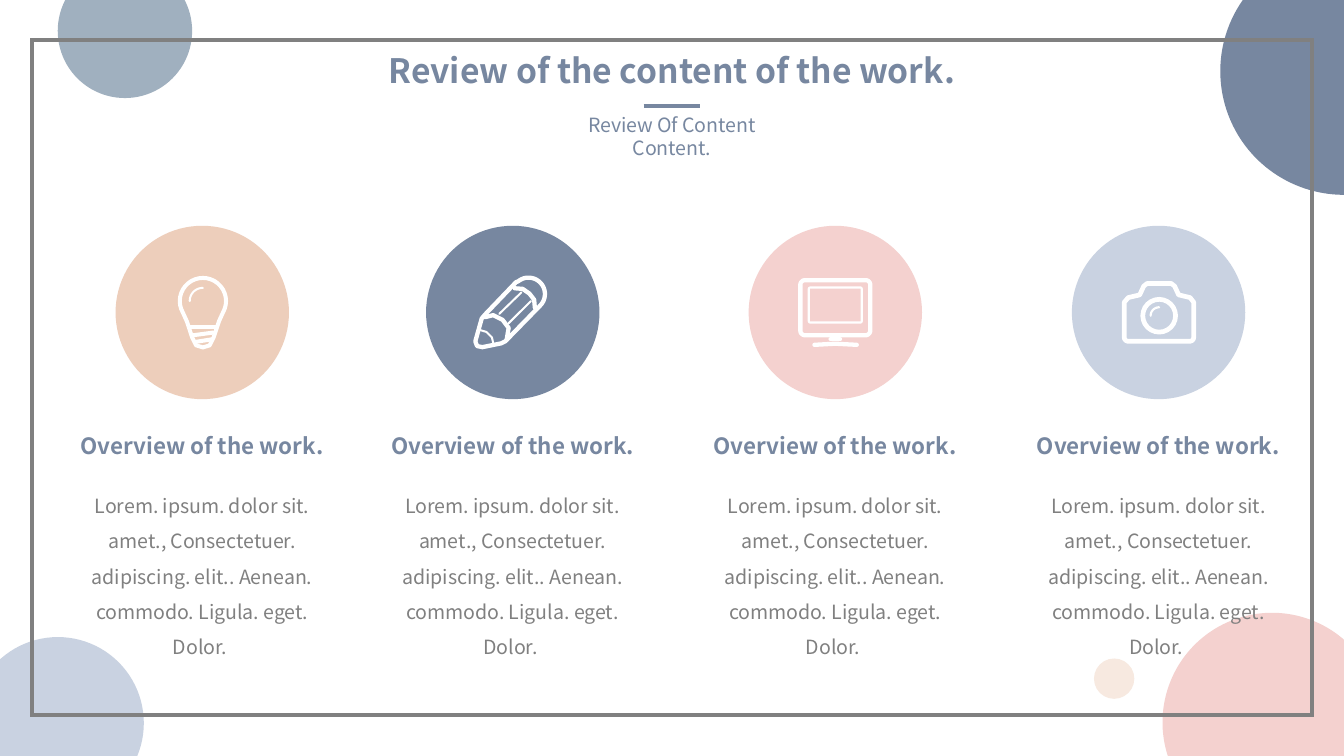
from math import cos, radians, sin

from lxml import etree
from pptx import Presentation
from pptx.dml.color import RGBColor
from pptx.enum.shapes import MSO_CONNECTOR, MSO_SHAPE
from pptx.enum.text import MSO_AUTO_SIZE, PP_ALIGN
from pptx.oxml.ns import qn
from pptx.util import Inches, Pt

OVAL, RECTANGLE = MSO_SHAPE.OVAL, MSO_SHAPE.RECTANGLE
STRAIGHT = MSO_CONNECTOR.STRAIGHT
CENTER = PP_ALIGN.CENTER
GROW = MSO_AUTO_SIZE.SHAPE_TO_FIT_TEXT

FONT = "Noto Sans CJK SC"
COLORS = {
    "navy": "7787A0", "rose": "F4D1CF", "steel": "A0B0BF", "mist": "C9D2E1",
    "cream": "F7E9E0", "peach": "EDCEBB", "gray": "808080", "white": "FFFFFF",
}
SLIDE_WIDTH = Inches(10)
SLIDE_HEIGHT = SLIDE_WIDTH * 9 // 16
CELL = SLIDE_WIDTH / 100
ICON_CELLS = 55
HEADING = "Overview of the work."
BODY = ("Lorem. ipsum. dolor sit. amet., Consectetuer. adipiscing. elit.. "
        "Aenean. commodo. Ligula. eget. Dolor. ")


def grid(cells):
    """Convert slide grid cells to a length."""
    return round(cells * CELL)


def rgb(color):
    """Look up a palette colour."""
    return RGBColor.from_string(COLORS[color])


def add_text(slide, box, text, size=10.5, color="navy", bold=False, wrap=True, spacing=None):
    """Place one centred paragraph in a box given in grid cells."""
    frame = slide.shapes.add_textbox(*map(grid, box)).text_frame
    frame.word_wrap = wrap
    frame.auto_size = GROW
    paragraph = frame.paragraphs[0]
    paragraph.alignment = CENTER
    if spacing:
        paragraph.line_spacing = spacing
    run = paragraph.add_run()
    run.text = text
    run.font.name, run.font.size, run.font.bold = FONT, Pt(size), bold
    run.font.color.rgb = rgb(color)


def style_outline(shape, color, width, join):
    """Leave a shape unfilled and give it a line with the named join."""
    shape.shadow.inherit = False
    shape.fill.background()
    shape.line.color.rgb = rgb(color)
    shape.line.width = width
    outline = shape._element.spPr.find(qn("a:ln"))
    if join == "round":
        outline.set("cap", "rnd")
    etree.SubElement(outline, qn(f"a:{join}"))


def add_disc(slide, box, color):
    """Place a plain coloured circle."""
    disc = slide.shapes.add_shape(OVAL, *map(grid, box))
    disc.shadow.inherit = False
    disc.fill.solid()
    disc.fill.fore_color.rgb = rgb(color)
    disc.line.fill.background()


def add_backdrop(slide):
    """Draw the decorative circles and the frame."""
    for left, top, size, color in (
        (90.8, -3.9, 18.4, "navy"), (86.5, 45.6, 16.3, "rose"),
        (4.3, -2.7, 10, "steel"), (-2.1, 47.4, 12.8, "mist"),
        (81.4, 49, 3, "cream"),
    ):
        add_disc(slide, (left, top, size, size), color)
    border = slide.shapes.add_shape(RECTANGLE, *map(grid, (2.4, 3, 95.2, 50.2)))
    style_outline(border, "gray", Pt(2.25), "miter")


def add_title(slide, box):
    """Place the title, its short rule and the subtitle inside a box."""
    left, top, width, height = box
    middle, rule_top = left + width / 2, top + 4.7
    add_text(slide, (left, top, width, 4), "Review of the content of the work.",
             size=18, bold=True)
    add_text(slide, (middle - 9.75, rule_top, 19.5, height - 4.7), "Review Of Content Content.")
    rule = slide.shapes.add_connector(
        STRAIGHT, *map(grid, (middle - 2.1, rule_top, middle + 2.1, rule_top)))
    rule.line.color.rgb = rgb("navy")
    rule.line.width = Pt(2.25)
    etree.SubElement(rule._element.spPr, qn("a:effectLst"))


def arc(x, y, radius, start, end):
    """Return points along an arc, with degrees running clockwise."""
    steps = 24
    angles = [radians(start + (end - start) * i / steps) for i in range(steps + 1)]
    return [(x + radius * cos(a), y + radius * sin(a)) for a in angles]


def rounded(left, top, right, bottom, radius):
    """Return the points of a rectangle with rounded corners."""
    return (arc(left + radius, top + radius, radius, 180, 270)
            + arc(right - radius, top + radius, radius, 270, 360)
            + arc(right - radius, bottom - radius, radius, 0, 90)
            + arc(left + radius, bottom - radius, radius, 90, 180))


ICONS = {
    "bulb": {
        3: [
            (arc(28, 19, 17.2, 150, 390) + [(40, 34), (36, 46), (33, 52), (28, 53.5),
                                           (23, 52), (20, 46), (16, 34)], True),
            ([(18, 38), (38, 38)], False),
            ([(20.5, 44.5), (35.5, 42.5)], False),
            ([(22, 49.5), (34.5, 47.5)], False),
        ],
        1.5: [(arc(28, 19, 9.8, 180, 270), False)],
    },
    "pencil": {
        3.2: [
            ([(-0.3, 49), (4.5, 32), (7, 29), (30, 5)] + arc(39.3, 13.8, 12.2, -130, 45)
             + [(22, 49), (19, 50.5), (5, 53.3), (1, 52.5)], True),
            ([(29, 9.5), (35, 10), (40, 13.5), (43.5, 18), (44, 24)], False),
            ([(7, 31), (13, 29.5), (20, 33), (24.5, 39), (23, 48)], False),
        ],
        1.5: [
            ([(17.5, 28.5), (34, 12.5)], False),
            ([(24.5, 35.5), (41, 19)], False),
            ([(3, 40.5), (8, 42), (12, 46), (13, 50)], False),
        ],
    },
    "monitor": {
        3.2: [
            (rounded(1.5, 3.5, 53.5, 44.5, 3.5), True),
            ([(24, 47.5), (31, 47.5)], False),
            ([(12, 51.6), (27.5, 50.8), (43.5, 51.6)], False),
        ],
        1.6: [(rounded(7.8, 9, 47.2, 35, 1), True)],
    },
    "camera": {
        3.5: [
            ([(2, 46), (2, 20), (5, 16.5), (13.5, 14.5), (16.5, 8), (19, 6),
              (37, 6), (39.5, 8), (42.5, 14.5), (51, 16.5), (53.7, 20)]
             + arc(50.7, 46, 3, 0, 90) + arc(5, 46, 3, 90, 180), True),
            (arc(28, 30, 12.2, 0, 360), True),
        ],
        1.6: [(arc(28, 30, 6.3, 180, 270), False)],
    },
}


def add_icon(slide, box, strokes):
    """Draw the white strokes of an icon inside a square box."""
    left, top, size = box
    unit = size / ICON_CELLS
    for weight, contours in strokes.items():
        builder = None
        for points, closed in contours:
            places = [(grid(left + x * unit), grid(top + y * unit)) for x, y in points]
            if builder is None:
                builder = slide.shapes.build_freeform(*places[0])
            else:
                builder.move_to(*places[0])
            builder.add_line_segments(places[1:], close=closed)
        style_outline(builder.convert_to_shape(), "white", grid(weight * unit), "round")


def add_topic(slide, box, color, icon):
    """Place a circle with its icon, heading and body text inside a box."""
    left, top, width, height = box
    middle = left + width / 2
    disc, icon_size, body_width = 12.9, 5.5, 18.6
    add_disc(slide, (middle - disc / 2, top, disc, disc), color)
    add_text(slide, (middle - body_width / 2, top + 18.6, body_width, height - 18.6),
             BODY, color="gray", spacing=1.5)
    add_text(slide, (left, top + 14.9, width, 3), HEADING, size=12, bold=True, wrap=False)
    add_icon(slide, (middle - icon_size / 2, top + 3.7, icon_size), ICONS[icon])


def main():
    """Build and save the slide."""
    deck = Presentation()
    deck.slide_width, deck.slide_height = SLIDE_WIDTH, SLIDE_HEIGHT
    slide = deck.slides.add_slide(deck.slide_layouts[6])
    add_backdrop(slide)
    add_title(slide, (24.75, 3.2, 50.5, 7.5))
    topics = ((4.65, "peach", "bulb"), (27.75, "navy", "pencil"),
              (51.75, "rose", "monitor"), (75.8, "mist", "camera"))
    for left, color, icon in topics:
        add_topic(slide, (left, 16.8, 20.8, 32.6), color, icon)
    deck.save("out.pptx")


if __name__ == "__main__":
    main()
